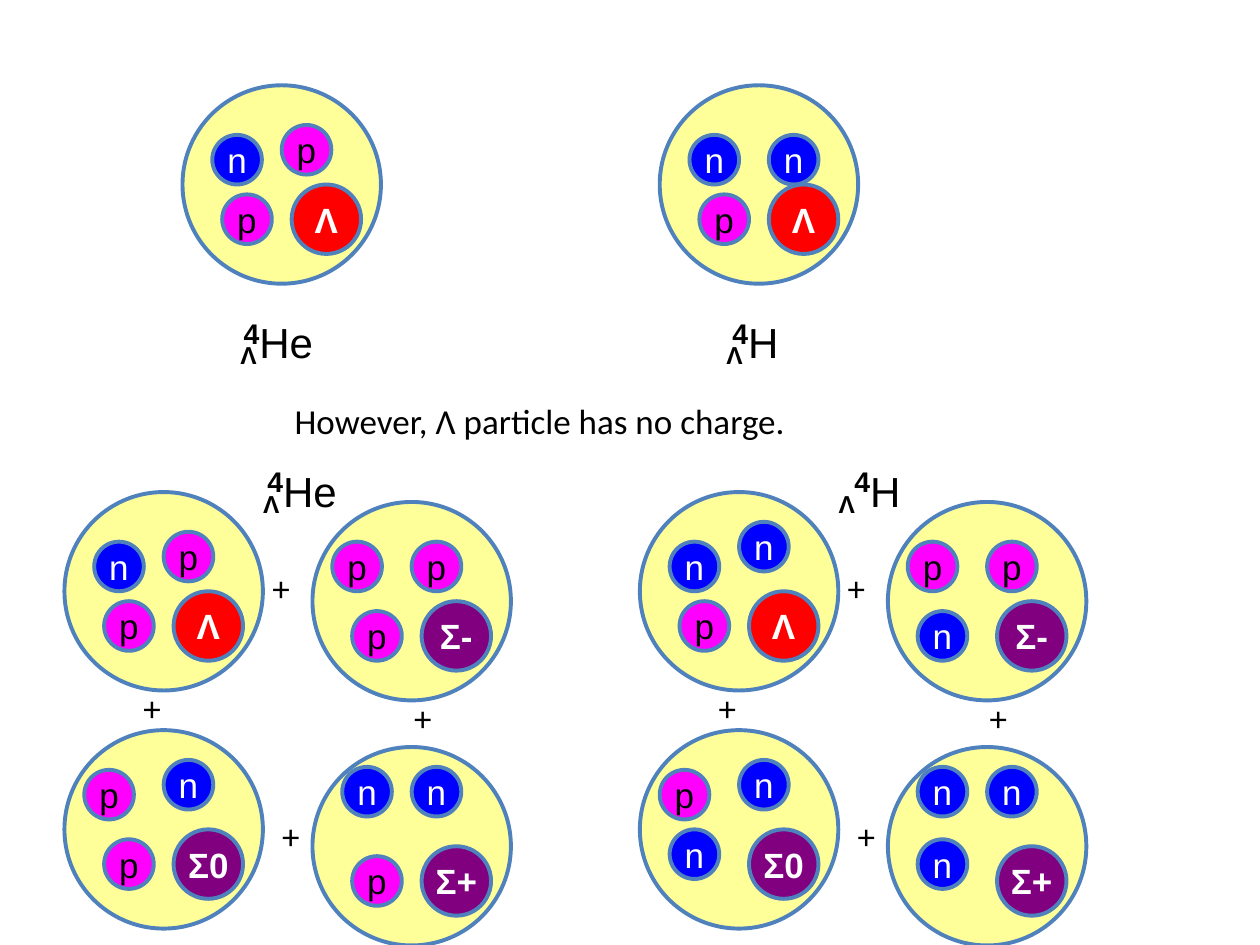
from dataclasses import dataclass

import pptx
import pptx.dml.color
import pptx.enum.shapes
import pptx.enum.text
import pptx.util

CELL = pptx.util.Cm(0.2)
NUCLEUS_SIZE, NUCLEON_SIZE, HYPERON_SIZE = 20, 5, 7
HYPERON_COLUMN, HYPERON_ROW = 11, 10
HANGING = pptx.util.Inches(0.38)
BLACK, WHITE, OUTLINE, NUCLEUS_FILL = "000000", "FFFFFF", "4F81BD", "FFFF99"


@dataclass(frozen=True)
class Kind:
    fill: str
    ink: str


@dataclass(frozen=True)
class Nucleon:
    symbol: str
    column: float
    row: float


@dataclass(frozen=True)
class Nucleus:
    column: float
    row: float
    hyperon: str
    nucleons: tuple[Nucleon, ...]


@dataclass(frozen=True)
class Isotope:
    element: str
    column: float
    row: float
    width: float
    lambda_column: float


KINDS = {"n": Kind("0000FF", WHITE), "p": Kind("FF00FF", BLACK),
         "Λ": Kind("FF0000", WHITE), "Σ": Kind("800080", WHITE)}

LEFT_PROTON = Nucleon("p", 4, 11)
LEFT_NEUTRON = Nucleon("n", 3, 5)
HELIUM_CORE = (LEFT_NEUTRON, LEFT_PROTON, Nucleon("p", 10, 4))
UPPER_PROTONS = (Nucleon("p", 10, 4), Nucleon("p", 2, 4))
MIXED_PAIR = (Nucleon("p", 2, 4), Nucleon("n", 10, 3))
UPPER_NEUTRONS = (Nucleon("n", 3, 2), Nucleon("n", 10, 2))

SIMPLE_NUCLEI = (
    Nucleus(18.4, 8.6, "Λ", HELIUM_CORE),
    Nucleus(66.5, 8.6, "Λ", (LEFT_NEUTRON, Nucleon("n", 11, 5), LEFT_PROTON)),
)

MIXTURE_ROW = 49.6
MIXTURE_COLUMNS = (6.5, 64.5)
STATES = (("Λ", 0, 0), ("Σ-", 25, 1), ("Σ0", 0, 24), ("Σ+", 25, 25.7))
PLUS_SIGNS = ((19.7, 6.9), (34, 20), (6.7, 19), (20.7, 31.9))
MIXTURES = (
    (HELIUM_CORE,
     (LEFT_PROTON, *UPPER_PROTONS),
     (LEFT_PROTON, *MIXED_PAIR),
     (LEFT_PROTON, *UPPER_NEUTRONS)),
    ((LEFT_NEUTRON, LEFT_PROTON, Nucleon("n", 10, 3)),
     (*UPPER_PROTONS, Nucleon("n", 3, 11)),
     (*MIXED_PAIR, Nucleon("n", 3, 10)),
     (*UPPER_NEUTRONS, Nucleon("n", 3, 9.3))),
)

ISOTOPES = (
    Isotope("He", 23.1, 30.6, 9.9, 22.5),
    Isotope("H", 72.4, 30.6, 7.5, 71.5),
    Isotope("He", 25.5, 45.6, 9.9, 24.8),
    Isotope("H", 84.7, 45.6, 7.5, 82.8),
)


def cells(*counts: float) -> list[int]:
    return [round(count * CELL) for count in counts]


def colour(value: str) -> pptx.dml.color.RGBColor:
    return pptx.dml.color.RGBColor.from_string(value)


def style(paragraph, font: str, size: float, ink: str, bold: bool = False) -> None:
    paragraph.font.name = font
    paragraph.font.size = pptx.util.Pt(size)
    paragraph.font.bold = bold
    paragraph.font.color.rgb = colour(ink)


def centre(paragraph) -> None:
    paragraph.alignment = pptx.enum.text.PP_ALIGN.CENTER
    properties = paragraph._p.get_or_add_pPr()
    properties.set("marL", str(HANGING))
    properties.set("indent", str(-HANGING))


def add_circle(slide, column: float, row: float, size: float, fill: str):
    circle = slide.shapes.add_shape(pptx.enum.shapes.MSO_SHAPE.OVAL,
                                    *cells(column, row, size, size))
    circle.shadow.inherit = False
    circle.fill.solid()
    circle.fill.fore_color.rgb = colour(fill)
    circle.line.color.rgb = colour(OUTLINE)
    circle.line.width = pptx.util.Pt(2.25)
    return circle


def add_particle(slide, symbol: str, column: float, row: float, size: float) -> None:
    kind = KINDS[symbol[0]]
    frame = add_circle(slide, column, row, size, kind.fill).text_frame
    frame.word_wrap = False
    frame.vertical_anchor = pptx.enum.text.MSO_ANCHOR.MIDDLE
    paragraph = frame.paragraphs[0]
    paragraph.text = symbol
    centre(paragraph)
    style(paragraph, "Arial", 20, kind.ink, size == HYPERON_SIZE)


def add_nucleus(slide, nucleus: Nucleus) -> None:
    add_circle(slide, nucleus.column, nucleus.row, NUCLEUS_SIZE, NUCLEUS_FILL)
    for nucleon in nucleus.nucleons:
        add_particle(slide, nucleon.symbol, nucleus.column + nucleon.column,
                     nucleus.row + nucleon.row, NUCLEON_SIZE)
    add_particle(slide, nucleus.hyperon, nucleus.column + HYPERON_COLUMN,
                 nucleus.row + HYPERON_ROW, HYPERON_SIZE)


def add_label(slide, text: str, column: float, row: float, width: float,
              height: float, font: str = "Calibri", size: float = 20,
              bold: bool = False):
    frame = slide.shapes.add_textbox(*cells(column, row, width, height)).text_frame
    frame.word_wrap = False
    frame.auto_size = pptx.enum.text.MSO_AUTO_SIZE.SHAPE_TO_FIT_TEXT
    paragraph = frame.paragraphs[0]
    paragraph.text = text
    style(paragraph, font, size, BLACK, bold)
    return paragraph


def add_isotope(slide, isotope: Isotope) -> None:
    symbol = add_label(slide, "4", isotope.column, isotope.row, isotope.width,
                       6.35, "Arial", 24)
    centre(symbol)
    mass = symbol.runs[0]
    mass.font.size = pptx.util.Pt(28)
    mass.font.bold = True
    mass._r.get_or_add_rPr().set("baseline", "30000")
    symbol.add_run().text = isotope.element
    centre(add_label(slide, "Λ", isotope.lambda_column, isotope.row + 3.05,
                     5.1, 4.2, "Arial", 14, True))


def main() -> None:
    presentation = pptx.Presentation()
    presentation.slide_width = pptx.util.Inches(10)
    presentation.slide_height = pptx.util.Inches(7.5)
    slide = presentation.slides.add_slide(presentation.slide_layouts[6])

    for nucleus in SIMPLE_NUCLEI:
        add_nucleus(slide, nucleus)
    add_label(slide, "However, Λ particle has no charge.", 28.45, 39.6, 58.5, 5.5)
    for left, mixture in zip(MIXTURE_COLUMNS, MIXTURES):
        for (hyperon, column, row), nucleons in zip(STATES, mixture):
            add_nucleus(slide, Nucleus(left + column, MIXTURE_ROW + row,
                                       hyperon, nucleons))
        for column, row in PLUS_SIGNS:
            add_label(slide, "+", left + column, MIXTURE_ROW + row, 4.6, 5.5)
    for isotope in ISOTOPES:
        add_isotope(slide, isotope)

    presentation.save("out.pptx")


if __name__ == "__main__":
    main()
